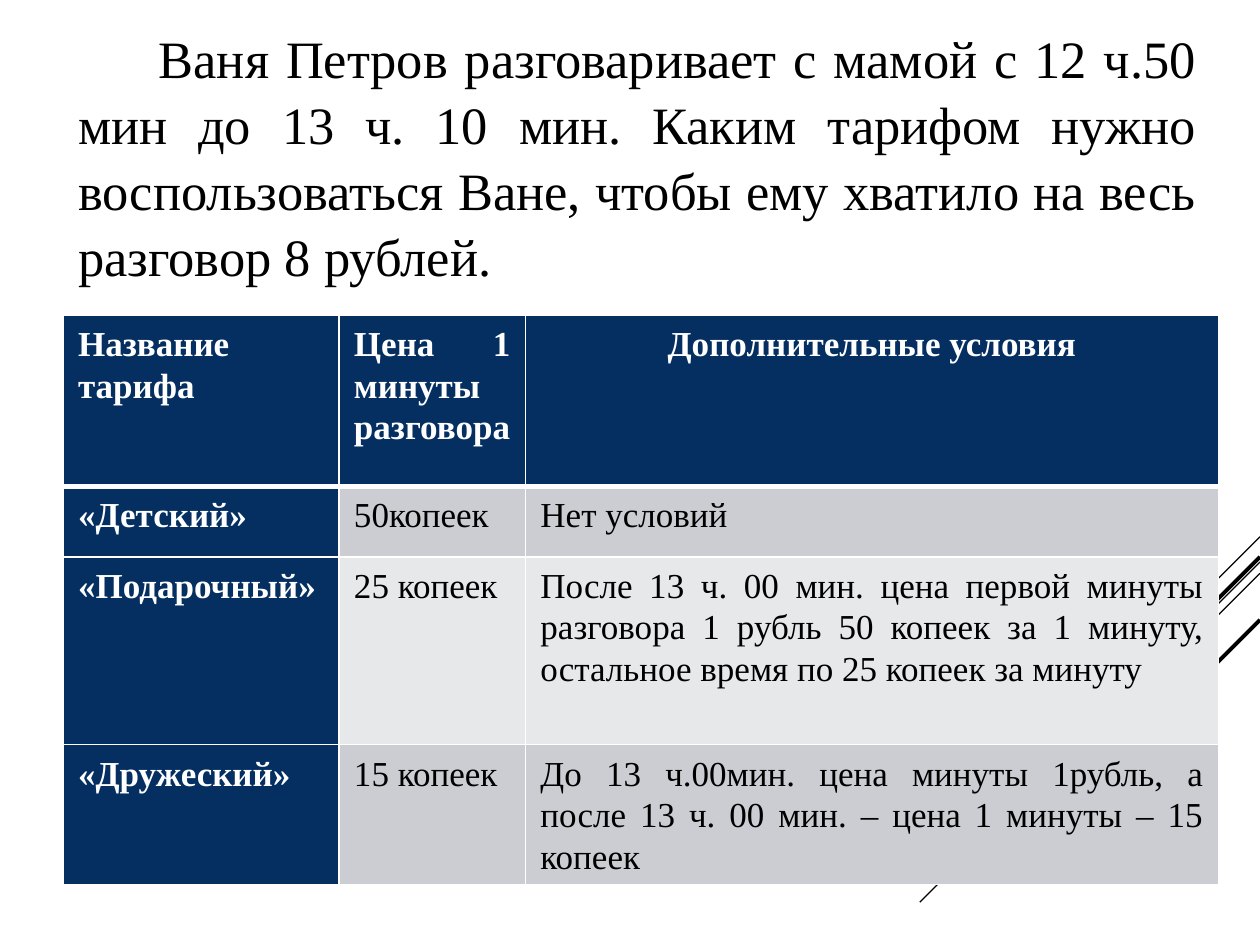
"""Build a slide that compares phone tariffs for a school maths problem."""
import pptx
import pptx.util
import pptx.dml.color
import pptx.enum.shapes
import pptx.enum.text
import pptx.oxml
import pptx.oxml.ns

Inches, Pt = pptx.util.Inches, pptx.util.Pt
RGBColor = pptx.dml.color.RGBColor
ALIGN = pptx.enum.text.PP_ALIGN

FONT = "Times New Roman"
BLACK = RGBColor(0, 0, 0)
WHITE = RGBColor(0xFF, 0xFF, 0xFF)
NAVY = RGBColor(0x05, 0x2F, 0x61)
BANDS = (RGBColor(0xE7, 0xE8, 0xEA), RGBColor(0xCC, 0xCD, 0xD2))

PROBLEM = (
    "Ваня Петров разговаривает с мамой с 12 ч.50 мин до 13 ч. 10 мин. "
    "Каким тарифом нужно воспользоваться Ване, чтобы ему хватило на весь "
    "разговор 8 рублей."
)
TARIFFS = [
    ("Название тарифа", "Цена 1 минуты разговора", "Дополнительные условия"),
    ("«Детский»", "50копеек", "Нет условий"),
    ("«Подарочный»", "25 копеек",
     "После 13 ч. 00 мин. цена первой минуты разговора 1 рубль 50 копеек "
     "за 1 минуту, остальное время по 25 копеек за минуту"),
    ("«Дружеский»", "15 копеек",
     "До 13 ч.00мин. цена минуты 1рубль, а после 13 ч. 00 мин. – "
     "цена 1 минуты – 15 копеек"),
]
COLUMN_WIDTHS = (2.19, 1.48, 5.5)
ROW_HEIGHTS = (1.36, 0.56, 1.49, 1.09)
# start y at the right edge, run of the 45° diagonal, weight
DIAGONALS = [(4.26, 0.83, 0.75), (4.46, 2.7, 0.75), (4.55, 1.72, 0.75),
             (4.42, 1.57, 2.25), (4.92, 1.14, 2.25)]


def add_diagonal(slide, right, top, run, weight):
    """Draw a line falling to the left at 45 degrees."""
    diagonal = slide.shapes.add_connector(
        pptx.enum.shapes.MSO_CONNECTOR.STRAIGHT,
        right, Inches(top), right - Inches(run), Inches(top + run))
    diagonal.line.color.rgb = BLACK
    diagonal.line.width = Pt(weight)
    diagonal._element.spPr.append(pptx.oxml.parse_xml(
        f"<a:effectLst {pptx.oxml.ns.nsdecls('a')}/>"))


def set_borders(cell, weights):
    """Give a cell white borders with a weight for each side."""
    properties = cell._tc.get_or_add_tcPr()
    for side, weight in weights.items():
        properties.append(pptx.oxml.parse_xml(
            f'<a:ln{side} {pptx.oxml.ns.nsdecls("a")} w="{Pt(weight)}">'
            f'<a:solidFill><a:srgbClr val="{WHITE}"/></a:solidFill></a:ln{side}>'))


def set_font(paragraph, size, color, bold=False):
    """Set the font of a whole paragraph."""
    font = paragraph.font
    font.name, font.size, font.bold = FONT, Pt(size), bold
    font.color.rgb = color


def add_problem(slide):
    """Fill the title with the problem text."""
    title = slide.shapes.title
    title.left, title.top = Inches(0.52), Inches(0.17)
    title.width, title.height = Inches(9.08), Inches(2.12)
    frame = title.text_frame
    frame.text = PROBLEM
    frame.word_wrap = True
    frame.auto_size = pptx.enum.text.MSO_AUTO_SIZE.NONE
    frame.vertical_anchor = pptx.enum.text.MSO_ANCHOR.MIDDLE
    paragraph = frame.paragraphs[0]
    paragraph.alignment = ALIGN.JUSTIFY
    paragraph.line_spacing = 1.05
    paragraph._p.get_or_add_pPr().set("indent", str(Inches(0.64)))
    set_font(paragraph, 30, BLACK)


def add_tariffs(slide):
    """Add the tariff table with a dark header row and first column."""
    table = slide.shapes.add_table(
        len(TARIFFS), len(COLUMN_WIDTHS), Inches(0.5), Inches(2.5),
        Inches(sum(COLUMN_WIDTHS)), Inches(sum(ROW_HEIGHTS))).table
    for column, width in zip(table.columns, COLUMN_WIDTHS):
        column.width = Inches(width)
    for r, (texts, height) in enumerate(zip(TARIFFS, ROW_HEIGHTS)):
        table.rows[r].height = Inches(height)
        for c, text in enumerate(texts):
            cell = table.cell(r, c)
            heading = r == 0 or c == 0
            cell.text = text
            cell.margin_left = cell.margin_right = Inches(0.12)
            cell.margin_top = cell.margin_bottom = Inches(0.06)
            set_borders(cell, {"L": 1, "R": 1, "T": 3 if r == 1 else 1,
                               "B": 3 if r == 0 else 1})
            cell.fill.solid()
            cell.fill.fore_color.rgb = NAVY if heading else BANDS[r % 2]
            paragraph = cell.text_frame.paragraphs[0]
            paragraph.alignment = ALIGN.CENTER if (r, c) == (0, 2) else ALIGN.JUSTIFY
            paragraph.line_spacing = 1.07
            set_font(paragraph, 20, WHITE if heading else BLACK, heading)


def main():
    """Assemble and save the slide."""
    deck = pptx.Presentation()
    deck.slide_width, deck.slide_height = Inches(10), Inches(7.5)
    slide = deck.slides.add_slide(deck.slide_layouts[5])
    for top, run, weight in DIAGONALS:
        add_diagonal(slide, deck.slide_width, top, run, weight)
    add_tariffs(slide)
    add_problem(slide)
    deck.save("out.pptx")


if __name__ == "__main__":
    main()
